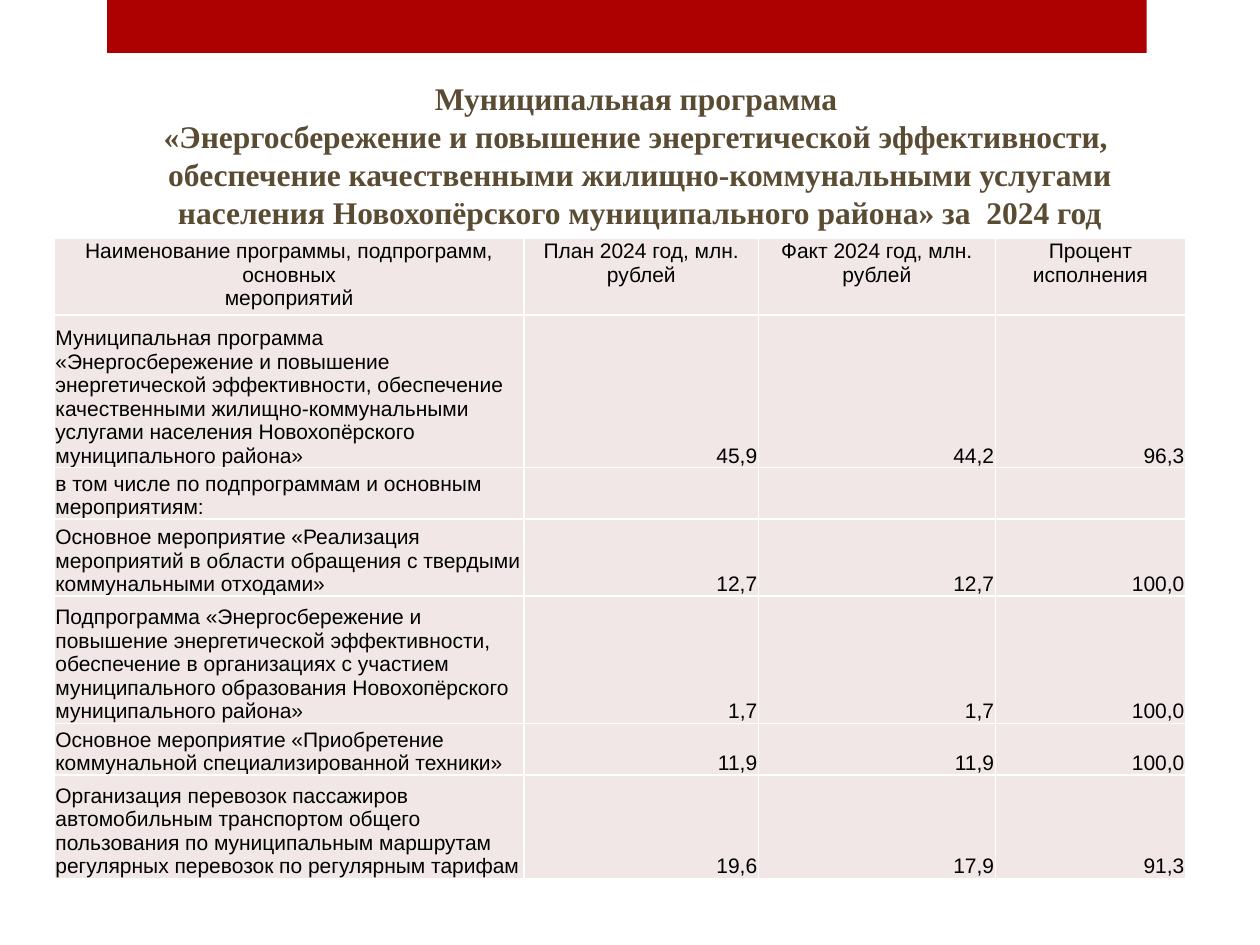
"""Build a slide with the execution of a municipal energy programme for 2024."""
import pptx
import pptx.dml.color
import pptx.enum.shapes
import pptx.enum.text
import pptx.oxml
import pptx.oxml.ns
import pptx.util
from pptx.util import Inches

RED = pptx.dml.color.RGBColor(0xAD, 0x01, 0x01)
BROWN = pptx.dml.color.RGBColor(0x5A, 0x4B, 0x33)
BLACK = pptx.dml.color.RGBColor(0, 0, 0)
WHITE = pptx.dml.color.RGBColor(0xFF, 0xFF, 0xFF)
PINK = pptx.dml.color.RGBColor(0xF1, 0xE7, 0xE7)
ALIGN = pptx.enum.text.PP_ALIGN
ANCHOR = pptx.enum.text.MSO_ANCHOR

TITLE = [
    "Муниципальная программа ",
    "«Энергосбережение и повышение энергетической эффективности, ",
    "обеспечение качественными жилищно-коммунальными услугами "
    "населения Новохопёрского муниципального района» за  2024 год",
]
COLUMN_WIDTHS = [3.73, 1.86, 1.88, 1.51]
ROW_HEIGHTS = [0.41, 0.74, 0.27, 0.55, 0.67, 0.41, 0.82]
ROWS = [
    ["Наименование программы, подпрограмм, основных\vмероприятий",
     "План 2024 год, млн. рублей", "Факт 2024 год, млн. рублей", "Процент исполнения"],
    ["Муниципальная программа  «Энергосбережение и повышение энергетической "
     "эффективности, обеспечение качественными жилищно-коммунальными услугами "
     "населения Новохопёрского муниципального района»", "45,9", "44,2", "96,3"],
    ["в том числе по подпрограммам и основным мероприятиям:", "", "", ""],
    ["Основное мероприятие «Реализация мероприятий в области обращения с твердыми "
     "коммунальными отходами»", "12,7", "12,7", "100,0"],
    ["Подпрограмма «Энергосбережение и повышение энергетической эффективности, "
     "обеспечение в организациях с участием муниципального образования "
     "Новохопёрского муниципального района»", "1,7", "1,7", "100,0"],
    ["Основное мероприятие «Приобретение коммунальной специализированной техники»",
     "11,9", "11,9", "100,0"],
    ["Организация перевозок пассажиров автомобильным транспортом общего пользования "
     "по муниципальным маршрутам регулярных перевозок по регулярным тарифам",
     "19,6", "17,9", "91,3"],
]


def style_paragraph(para, text, align, font_name, size, color, bold=False):
    """Write text into a paragraph and set its alignment and font."""
    if text:
        para.text = text
    para.alignment = align
    para.font.name = font_name
    para.font.size = pptx.util.Pt(size)
    para.font.color.rgb = color
    para.font.bold = bold


def add_band(page):
    """Add the red band at the top edge."""
    band = page.shapes.add_shape(pptx.enum.shapes.MSO_SHAPE.RECTANGLE,
                                 Inches(0.85), 0, Inches(8.25), Inches(0.42))
    band.shadow.inherit = False
    band.fill.solid()
    band.fill.fore_color.rgb = RED
    band.line.fill.background()


def add_title(page):
    """Add the centred heading."""
    box = page.shapes.add_textbox(Inches(0.83), Inches(0.58), Inches(8.5), Inches(1.31))
    frame = box.text_frame
    frame.word_wrap = True
    frame.auto_size = pptx.enum.text.MSO_AUTO_SIZE.SHAPE_TO_FIT_TEXT
    for index, line in enumerate(TITLE):
        para = frame.add_paragraph() if index else frame.paragraphs[0]
        style_paragraph(para, line, ALIGN.CENTER, "Times New Roman", 18, BROWN, True)


def add_borders(cell):
    """Draw thin white lines on all sides of a cell."""
    properties = cell._tc.get_or_add_tcPr()
    for side in ("lnL", "lnR", "lnT", "lnB"):
        properties.append(pptx.oxml.parse_xml(
            f'<a:{side} {pptx.oxml.ns.nsdecls("a")} w="12700"><a:solidFill>'
            f'<a:srgbClr val="{WHITE}"/></a:solidFill></a:{side}>'))


def fill_cell(cell, text, align, anchor):
    """Set the text, margins, borders and fill of a cell."""
    cell.margin_left = cell.margin_right = cell.margin_top = Inches(0.01)
    cell.margin_bottom = 0
    cell.vertical_anchor = anchor
    style_paragraph(cell.text_frame.paragraphs[0], text, align, "Arial", 12, BLACK)
    add_borders(cell)
    cell.fill.solid()
    cell.fill.fore_color.rgb = PINK


def add_budget_table(page):
    """Add the table of planned and actual spending."""
    height = Inches(4.67)
    holder = page.shapes.add_table(len(ROWS), len(COLUMN_WIDTHS), Inches(0.43),
                                   Inches(1.89), Inches(sum(COLUMN_WIDTHS)), height)
    table = holder.table
    table.first_row = table.horz_banding = False
    for column, width in zip(table.columns, COLUMN_WIDTHS):
        column.width = Inches(width)
    for row, row_height in zip(table.rows, ROW_HEIGHTS):
        row.height = Inches(row_height)
    holder.height = height
    for row_index, texts in enumerate(ROWS):
        for column_index, text in enumerate(texts):
            if row_index == 0:
                align, anchor = ALIGN.CENTER, ANCHOR.TOP
            else:
                align = ALIGN.RIGHT if column_index else ALIGN.LEFT
                anchor = ANCHOR.BOTTOM
            fill_cell(table.cell(row_index, column_index), text, align, anchor)


def main():
    """Build and save the deck."""
    deck = pptx.Presentation()
    deck.slide_width = Inches(10)
    deck.slide_height = Inches(7.5)
    page = deck.slides.add_slide(deck.slide_layouts[6])
    add_band(page)
    add_title(page)
    add_budget_table(page)
    deck.save("out.pptx")


if __name__ == "__main__":
    main()
